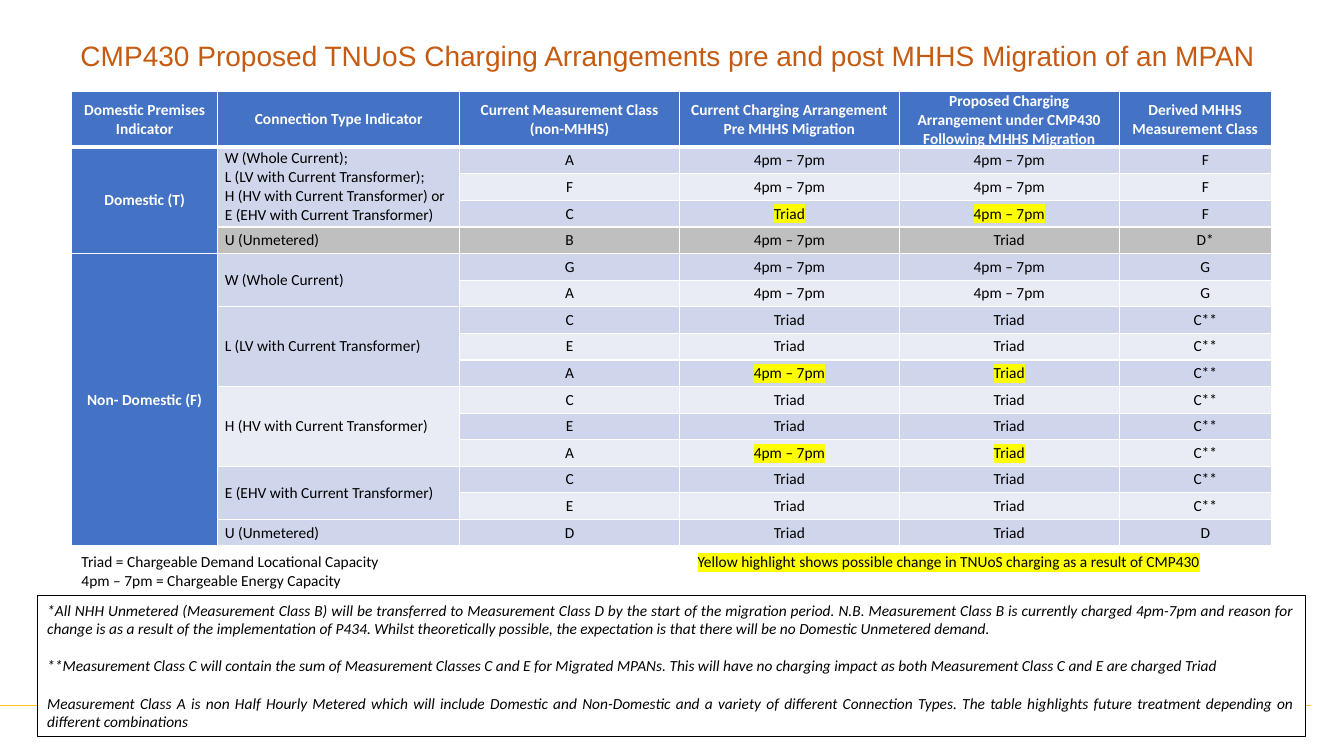
import pptx
import pptx.dml.color
import pptx.enum.shapes
import pptx.enum.text
import pptx.oxml
import pptx.oxml.ns
import pptx.util
from pptx.util import Inches

COLORS = {
    "title": "C55A11", "header": "4472C4", "band": "CFD5EA", "pale": "E9EBF5",
    "grey": "BFBFBF", "white": "FFFFFF", "black": "000000",
    "yellow": "FFFF00", "curve": "FFBF22",
}
ALIGN = pptx.enum.text.PP_ALIGN
NAMESPACE = pptx.oxml.ns.nsdecls("a")


def rgb(name):
    return pptx.dml.color.RGBColor.from_string(COLORS[name])


def write(frame, text, size=11, font="Calibri", color="black", bold=False, italic=False,
          align=ALIGN.LEFT, highlight=False, gap=0, line=None, indent=0):
    """Fill a text frame with one paragraph per line of text; gap is the space between them."""
    frame.word_wrap = True
    lines = text.split("\n")
    for number, words in enumerate(lines):
        para = frame.paragraphs[0] if number == 0 else frame.add_paragraph()
        para.alignment = align
        if number < len(lines) - 1:
            para.space_after = pptx.util.Pt(gap)
        if line:
            para.line_spacing = pptx.util.Pt(line)
        if indent:
            para._p.get_or_add_pPr().set("marL", str(Inches(indent)))
        span = para.add_run()
        span.text = words
        span.font.size = pptx.util.Pt(size)
        span.font.bold = bold
        span.font.italic = italic
        span.font.color.rgb = rgb(color)
        if highlight:
            span._r.get_or_add_rPr().append(pptx.oxml.parse_xml(
                f'<a:highlight {NAMESPACE}><a:srgbClr val="{COLORS["yellow"]}"/></a:highlight>'))
        span.font.name = font


deck = pptx.Presentation()
deck.slide_width = Inches(13.33)
deck.slide_height = Inches(7.5)
page = deck.slides.add_slide(deck.slide_layouts[6])

# Footer curve
curve_points = [
    (12.53, 6.82), (12.48, 6.82), (12.44, 6.83), (12.4, 6.84), (12.37, 6.85), (12.33, 6.87),
    (12.3, 6.9), (12.26, 6.92), (12.04, 7.15), (12.01, 7.18), (11.98, 7.2), (11.94, 7.22),
    (11.9, 7.24), (11.86, 7.25), (11.82, 7.26), (11.78, 7.26), (0, 7.26),
]
builder = page.shapes.build_freeform(13.35, 6.83, scale=Inches(1))
builder.add_line_segments(curve_points, close=False)
curve = builder.convert_to_shape()
curve.shadow.inherit = False
curve.fill.background()
curve.line.color.rgb = rgb("curve")
curve.line.width = pptx.util.Pt(1.29)

# Title
title = page.shapes.add_textbox(Inches(0.7), Inches(0.46), Inches(12.26), Inches(0.32))
write(title.text_frame,
      "CMP430 Proposed TNUoS Charging Arrangements pre and post MHHS Migration of an MPAN",
      size=20, font="Arial", color="title", line=15)

# Footnotes
notes = page.shapes.add_shape(pptx.enum.shapes.MSO_SHAPE.RECTANGLE,
                              Inches(0.37), Inches(5.91), Inches(12.58), Inches(1.4))
notes.shadow.inherit = False
notes.fill.solid()
notes.fill.fore_color.rgb = rgb("white")
notes.line.color.rgb = rgb("black")
notes.line.width = pptx.util.Pt(0.75)
notes.text_frame.vertical_anchor = pptx.enum.text.MSO_ANCHOR.TOP
write(notes.text_frame,
      "*All NHH Unmetered (Measurement Class B) will be transferred to Measurement Class D by the "
      "start of the migration period. N.B. Measurement Class B is currently charged 4pm-7pm and "
      "reason for change is as a result of the implementation of P434. Whilst theoretically "
      "possible, the expectation is that there will be no Domestic Unmetered demand.\n"
      "**Measurement Class C will contain the sum of Measurement Classes C and E for Migrated "
      "MPANs. This will have no charging impact as both Measurement Class C and E are charged "
      "Triad\n"
      "Measurement Class A is non Half Hourly Metered which will include Domestic and "
      "Non-Domestic and a variety of different Connection Types. The table highlights future "
      "treatment depending on different combinations",
      italic=True, align=ALIGN.JUSTIFY, gap=13.4)

# Key below the table
key = page.shapes.add_textbox(Inches(0.71), Inches(5.43), Inches(5.2), Inches(0.47))
write(key.text_frame,
      "Triad = Chargeable Demand Locational Capacity\n4pm – 7pm = Chargeable Energy Capacity",
      align=ALIGN.JUSTIFY)
highlight_key = page.shapes.add_textbox(Inches(6.82), Inches(5.43), Inches(5.2), Inches(0.29))
write(highlight_key.text_frame,
      "Yellow highlight shows possible change in TNUoS charging as a result of CMP430",
      align=ALIGN.JUSTIFY, highlight=True)

# Charging table
PEAK, TRIAD = "4pm – 7pm", "Triad"
headers = [
    "Domestic Premises Indicator", "Connection Type Indicator",
    "Current Measurement Class (non-MHHS)", "Current Charging Arrangement Pre MHHS Migration",
    "Proposed Charging Arrangement under CMP430 Following MHHS Migration",
    "Derived MHHS Measurement Class",
]
charges = [
    ("A", PEAK, PEAK, "F"), ("F", PEAK, PEAK, "F"), ("C", TRIAD, PEAK, "F"),
    ("B", PEAK, TRIAD, "D*"),
    ("G", PEAK, PEAK, "G"), ("A", PEAK, PEAK, "G"),
    ("C", TRIAD, TRIAD, "C**"), ("E", TRIAD, TRIAD, "C**"), ("A", PEAK, TRIAD, "C**"),
    ("C", TRIAD, TRIAD, "C**"), ("E", TRIAD, TRIAD, "C**"), ("A", PEAK, TRIAD, "C**"),
    ("C", TRIAD, TRIAD, "C**"), ("E", TRIAD, TRIAD, "C**"),
    ("D", TRIAD, TRIAD, "D"),
]
premises = [("Domestic (T)", 4), ("Non- Domestic (F)", 11)]
connections = [
    ("W (Whole Current);\nL (LV with Current Transformer);\n"
     "H (HV with Current Transformer) or\nE (EHV with Current Transformer)", 3),
    ("U (Unmetered)", 1), ("W (Whole Current)", 2), ("L (LV with Current Transformer)", 3),
    ("H (HV with Current Transformer)", 3), ("E (EHV with Current Transformer)", 2),
    ("U (Unmetered)", 1),
]
UNMETERED_ROW = 4
header_height, table_height = 0.54, 4.5
row_height = (table_height - header_height) / len(charges)
table = page.shapes.add_table(len(charges) + 1, len(headers), Inches(0.71), Inches(0.91),
                              Inches(11.9), Inches(table_height)).table
for column, width in zip(table.columns, [1.45, 2.4, 2.18, 2.18, 2.18, 1.51]):
    column.width = Inches(width)

for r, row in enumerate(table.rows):
    row.height = Inches(row_height if r else header_height)
    band = "grey" if r == UNMETERED_ROW else "band" if r % 2 else "pale"
    for c, cell in enumerate(row.cells):
        cell.margin_left = cell.margin_right = Inches(0.07)
        cell.margin_top = cell.margin_bottom = 0
        cell.vertical_anchor = pptx.enum.text.MSO_ANCHOR.MIDDLE
        for side in "LRTB":
            points = 3 if (r, side) in [(0, "B"), (1, "T")] else 1
            cell._tc.get_or_add_tcPr().append(pptx.oxml.parse_xml(
                f'<a:ln{side} {NAMESPACE} w="{pptx.util.Pt(points)}"><a:solidFill>'
                f'<a:srgbClr val="{COLORS["white"]}"/></a:solidFill></a:ln{side}>'))
        cell.fill.solid()
        cell.fill.fore_color.rgb = rgb("header" if r == 0 or c == 0 else band)

for c, label in enumerate(headers):
    write(table.cell(0, c).text_frame, label, color="white", bold=True, align=ALIGN.CENTER)

for c, groups, style in [
    (0, premises, {"color": "white", "bold": True, "align": ALIGN.CENTER}),
    (1, connections, {}),
]:
    top = 1
    for label, height in groups:
        cell = table.cell(top, c)
        if height > 1:
            cell.merge(table.cell(top + height - 1, c))
        write(cell.text_frame, label, **style)
        top += height

for r, values in enumerate(charges, start=1):
    changed = values[1] != values[2] and r != UNMETERED_ROW
    for c, value in enumerate(values, start=2):
        write(table.cell(r, c).text_frame, value, align=ALIGN.CENTER,
              highlight=changed and c in (3, 4), indent=0.2 if c == 5 else 0)

deck.save("out.pptx")
